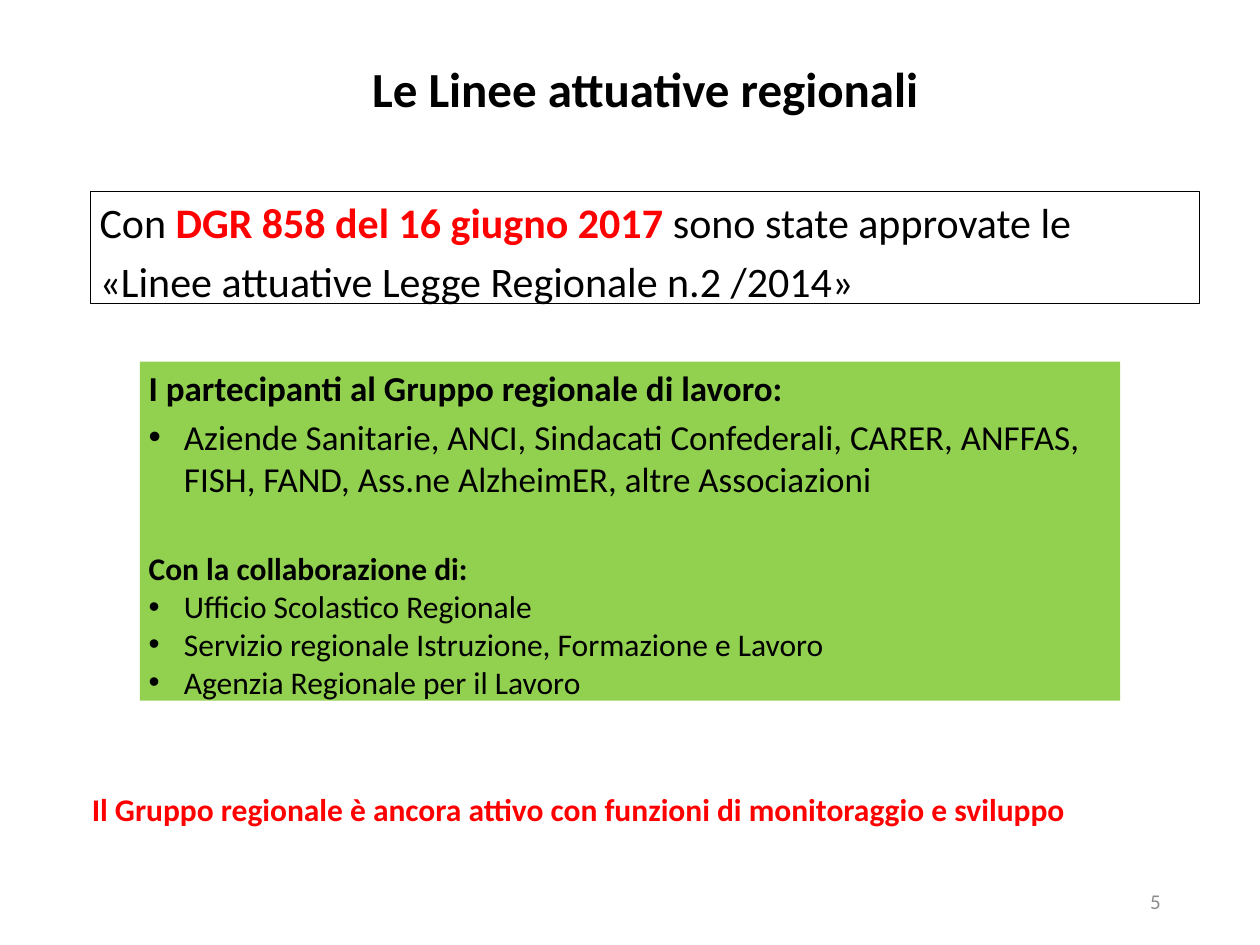
from lxml import etree
from pptx import Presentation
from pptx.dml.color import RGBColor
from pptx.enum.shapes import MSO_SHAPE
from pptx.enum.text import MSO_ANCHOR, PP_ALIGN
from pptx.oxml.ns import qn
from pptx.util import Inches, Pt

RECTANGLE = MSO_SHAPE.RECTANGLE
TOP, MIDDLE, BOTTOM = MSO_ANCHOR.TOP, MSO_ANCHOR.MIDDLE, MSO_ANCHOR.BOTTOM
LEFT, CENTER, RIGHT, JUSTIFY = PP_ALIGN.LEFT, PP_ALIGN.CENTER, PP_ALIGN.RIGHT, PP_ALIGN.JUSTIFY

COLORS = {"black": "000000", "red": "FF0000", "green": "92D050", "gray": "8C8C8C"}
HANGING = Inches(0.28)
PANEL_INSETS = {
    "margin_left": Inches(0.07), "margin_right": Inches(0.07),
    "margin_top": Inches(0.04), "margin_bottom": Inches(0.04),
}


def rgb(name):
    return RGBColor.from_string(COLORS[name])


def write(frame, paragraphs, anchor=TOP):
    """Fill a frame from (runs, size, bulleted, paragraph format); a run is (text, colour, bold)."""
    frame.word_wrap = True
    frame.vertical_anchor = anchor
    for index, (runs, size, bulleted, layout) in enumerate(paragraphs):
        paragraph = frame.paragraphs[0] if index == 0 else frame.add_paragraph()
        for attribute, value in ({"alignment": LEFT} | layout).items():
            setattr(paragraph, attribute, value)
        if bulleted:
            properties = paragraph._p.get_or_add_pPr()
            properties.set("marL", str(HANGING))
            properties.set("indent", str(-HANGING))
            etree.SubElement(properties, qn("a:buFont")).set("typeface", "Arial")
            etree.SubElement(properties, qn("a:buChar")).set("char", "•")
        for text, color, bold in runs:
            run = paragraph.add_run()
            run.text = text
            font_format = {"name": "Calibri", "size": Pt(size), "bold": bold}
            for attribute, value in font_format.items():
                setattr(run.font, attribute, value)
            run.font.color.rgb = rgb(color)


presentation = Presentation()
presentation.slide_width, presentation.slide_height = Inches(10), Inches(7.5)
slide = presentation.slides.add_slide(presentation.slide_layouts[6])

# Title, page number and closing remark
captions = [
    ((0.72, 0.53, 8.8, 0.46), "Le Linee attuative regionali", 28, "black", True,
     {"alignment": CENTER, "line_spacing": 0.9}, BOTTOM),
    ((7.06, 6.95, 2.25, 0.4), "5", 12, "gray", False, {"alignment": RIGHT}, MIDDLE),
    ((0.63, 6.22, 8.89, 0.4),
     "Il Gruppo regionale è ancora attivo con funzioni di monitoraggio e sviluppo",
     18, "red", True, {}, TOP),
]
for box, text, size, color, bold, layout, anchor in captions:
    caption = slide.shapes.add_textbox(*map(Inches, box))
    write(caption.text_frame, [([(text, color, bold)], size, False, layout)], anchor)

# Resolution and working group
resolution = [
    ([("Con ", "black", False),
      ("DGR 858 del 16 giugno 2017 ", "red", True),
      ("sono state approvate le", "black", False)], 24, False, {"space_before": Pt(4.8)}),
    ([("«Linee attuative Legge Regionale n.2 /2014»", "black", False)],
     24, False, {"space_before": Pt(4.8)}),
]
working_group = [
    ([("I partecipanti al Gruppo regionale di lavoro:", "black", True)],
     20, False, {"alignment": JUSTIFY, "space_before": Pt(4)}),
    ([("Aziende Sanitarie, ANCI, Sindacati Confederali, CARER, ANFFAS, FISH, FAND, "
       "Ass.ne AlzheimER, altre Associazioni", "black", False)],
     20, True, {"space_before": Pt(4)}),
    ([("Con la collaborazione di:", "black", True)], 18, False, {"space_before": Pt(28.4)}),
]
collaborators = [
    "Ufficio Scolastico Regionale",
    "Servizio regionale Istruzione, Formazione e Lavoro",
    "Agenzia Regionale per il Lavoro",
]
working_group += [([(name, "black", False)], 18, True, {}) for name in collaborators]

panels = [
    ((1.11, 2.87, 7.78, 2.69), "green", None, working_group),
    ((0.72, 1.52, 8.8, 0.89), None, "black", resolution),
]
for box, fill, outline, paragraphs in panels:
    panel = slide.shapes.add_shape(RECTANGLE, *map(Inches, box))
    panel.shadow.inherit = False
    if fill:
        panel.fill.solid()
        panel.fill.fore_color.rgb = rgb(fill)
    else:
        panel.fill.background()
    if outline:
        panel.line.color.rgb = rgb(outline)
        panel.line.width = Pt(0.75)
    else:
        panel.line.fill.background()
    for attribute, value in PANEL_INSETS.items():
        setattr(panel.text_frame, attribute, value)
    write(panel.text_frame, paragraphs)

presentation.save("out.pptx")
